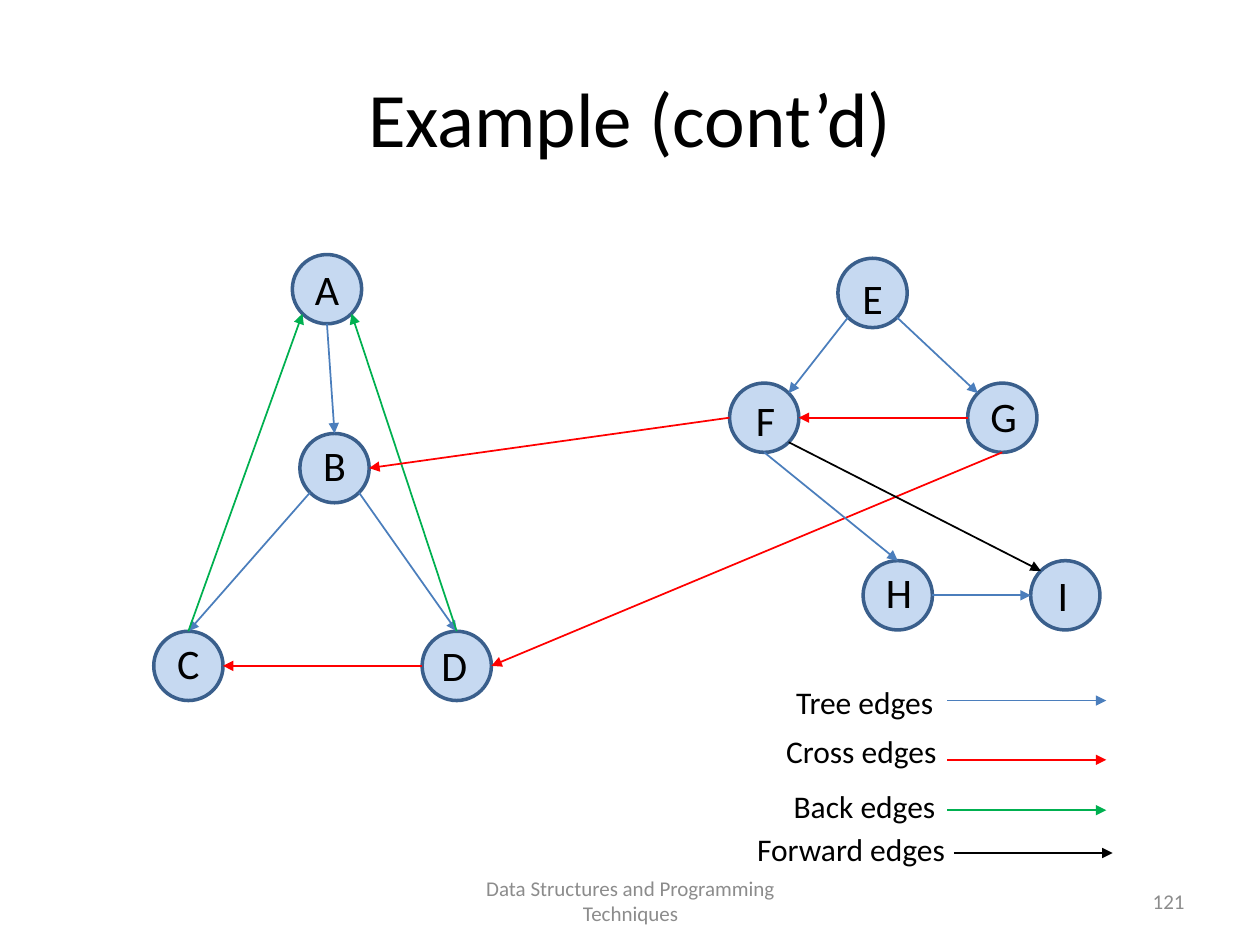
from dataclasses import dataclass
from math import sqrt

from lxml import etree
from pptx import Presentation
from pptx import util as u
from pptx.dml.color import RGBColor
from pptx.enum import shapes, text
from pptx.oxml import ns


@dataclass(frozen=True)
class Theme:
    font: str = "Calibri"
    ink: str = "000000"
    gray: str = "8C8C8C"
    fill: str = "C6D9F1"
    rim: str = "3A5F8C"
    tree: str = "4B7EBC"
    cross: str = "FF0000"
    back: str = "00B050"
    ahead: str = "000000"
    title: int = 44
    node: int = 24
    key: int = 18
    foot: int = 12


THEME = Theme()
SIZE = 0.55
HALF = SIZE / 2
DIAG = HALF / sqrt(2)
PORTS = {
    "n": (0, -HALF), "s": (0, HALF), "w": (-HALF, 0), "e": (HALF, 0),
    "nw": (-DIAG, -DIAG), "ne": (DIAG, -DIAG),
    "sw": (-DIAG, DIAG), "se": (DIAG, DIAG),
}
NODES = {
    "A": ((2.32, 2.02), (2.36, 2.04)),
    "B": ((2.38, 3.44), (2.42, 3.44)),
    "C": ((1.22, 5.01), (1.26, 5.01)),
    "D": ((3.35, 5.01), (3.37, 5.03)),
    "E": ((6.65, 2.05), (6.69, 2.11)),
    "F": ((5.79, 3.04), (5.84, 3.08)),
    "G": ((7.68, 3.04), (7.73, 3.05)),
    "H": ((6.85, 4.45), (6.90, 4.45)),
    "I": ((8.18, 4.45), (8.20, 4.47)),
}
EDGES = [
    ("A", "s", "B", "n", THEME.tree),
    ("B", "sw", "C", "n", THEME.tree),
    ("B", "se", "D", "n", THEME.tree),
    ("E", "sw", "F", "ne", THEME.tree),
    ("E", "se", "G", "nw", THEME.tree),
    ("G", "w", "F", "e", THEME.cross),
    ("G", "s", "D", "e", THEME.cross),
    ("D", "w", "C", "e", THEME.cross),
    ("D", "n", "A", "se", THEME.back),
    ("C", "n", "A", "sw", THEME.back),
    ("F", "w", "B", "e", THEME.cross),
    ("F", "s", "H", "n", THEME.tree),
    ("H", "e", "I", "w", THEME.tree),
    ("F", "se", "I", "nw", THEME.ahead),
]
KEYS = [
    ("Tree edges", (6.22, 5.37), (7.52, 5.56), THEME.tree),
    ("Cross edges", (6.14, 5.76), (7.52, 6.03), THEME.cross),
    ("Back edges", (6.20, 6.20), (7.52, 6.43), THEME.back),
    ("Forward edges", (5.91, 6.54), (7.57, 6.77), THEME.ahead),
]


def color(code):
    return RGBColor.from_string(code)


def add_text(slide, words, box, size, ink=THEME.ink, align="CENTER", anchor="TOP"):
    frame = slide.shapes.add_textbox(*map(u.Inches, box)).text_frame
    frame.word_wrap = True
    frame.vertical_anchor = text.MSO_ANCHOR[anchor]
    para = frame.paragraphs[0]
    para.alignment = text.PP_ALIGN[align]
    run = para.add_run()
    run.text = words
    run.font.name = THEME.font
    run.font.size = u.Pt(size)
    run.font.color.rgb = color(ink)


def add_node(slide, spot):
    node = slide.shapes.add_shape(
        shapes.MSO_SHAPE.OVAL, *map(u.Inches, (*spot, SIZE, SIZE)))
    node.shadow.inherit = False
    node.fill.solid()
    node.fill.fore_color.rgb = color(THEME.fill)
    node.line.color.rgb = color(THEME.rim)
    node.line.width = u.Pt(2)


def add_arrow(slide, start, end, ink):
    arrow = slide.shapes.add_connector(
        shapes.MSO_CONNECTOR.STRAIGHT, *map(u.Inches, (*start, *end)))
    arrow.line.color.rgb = color(ink)
    arrow.line.width = u.Pt(1)
    tail = etree.SubElement(arrow.line._get_or_add_ln(), ns.qn("a:tailEnd"))
    tail.set("type", "triangle")
    etree.SubElement(arrow._element.spPr, ns.qn("a:effectLst"))


def find_port(name, side):
    left, top = NODES[name][0]
    across, down = PORTS[side]
    return left + HALF + across, top + HALF + down


def add_graph(slide):
    for spot, _ in NODES.values():
        add_node(slide, spot)
    for source, exit_side, target, entry, ink in EDGES:
        add_arrow(slide, find_port(source, exit_side), find_port(target, entry), ink)
    for name, (_, spot) in NODES.items():
        add_text(slide, name, (*spot, 0.47, 0.5), THEME.node)


def add_legend(slide):
    for words, spot, start, ink in KEYS:
        add_text(slide, words, (*spot, 1.75, 0.4), THEME.key, align="LEFT")
        add_arrow(slide, start, (start[0] + 1.26, start[1]), ink)


def main():
    deck = Presentation()
    deck.slide_width, deck.slide_height = u.Inches(10), u.Inches(7.5)
    slide = deck.slides.add_slide(deck.slide_layouts[6])
    add_text(slide, "Example (cont’d)", (0.5, 0.3, 9, 1.25), THEME.title,
             anchor="MIDDLE")
    add_graph(slide)
    add_legend(slide)
    add_text(slide, "Data Structures and Programming Techniques",
             (3.42, 6.95, 3.17, 0.4), THEME.foot, THEME.gray, anchor="MIDDLE")
    add_text(slide, "121", (7.17, 6.95, 2.33, 0.4), THEME.foot, THEME.gray,
             "RIGHT", "MIDDLE")
    deck.save("out.pptx")


if __name__ == "__main__":
    main()
